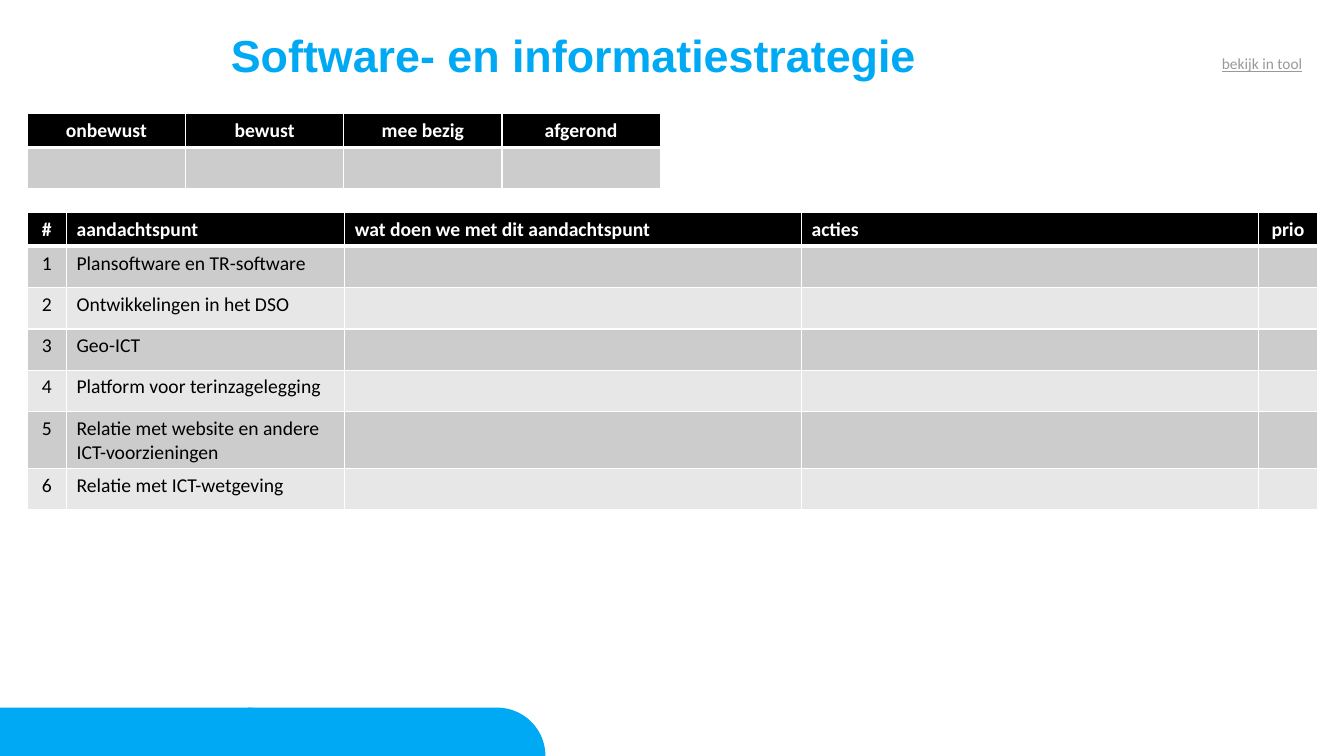
from math import cos, pi, sin

from lxml.etree import SubElement
from pptx import Presentation
from pptx.dml.color import RGBColor
from pptx.enum.text import MSO_ANCHOR, PP_ALIGN
from pptx.oxml.ns import qn
from pptx.util import Inches, Pt

BLUE = RGBColor(0x00, 0xA9, 0xF3)
BLACK = RGBColor(0x00, 0x00, 0x00)
WHITE = RGBColor(0xFF, 0xFF, 0xFF)
DARK_BAND = RGBColor(0xCC, 0xCC, 0xCC)
LIGHT_BAND = RGBColor(0xE7, 0xE7, 0xE7)
LINK_GREY = RGBColor(0x99, 0x99, 0x99)

HEADER_HEIGHT = 0.33
ROW_HEIGHT = 0.41

STATUSES = ["onbewust", "bewust", "mee bezig", "afgerond"]
HEADINGS = ["#", "aandachtspunt", "wat doen we met dit aandachtspunt", "acties", "prio"]
TOPICS = [
    "Plansoftware en TR-software",
    "Ontwikkelingen in het DSO",
    "Geo-ICT",
    "Platform voor terinzagelegging",
    "Relatie met website en andere ICT-voorzieningen",
    "Relatie met ICT-wetgeving",
]


class SlideBuilder:
    table_font = "Calibri"
    table_size = 14

    def __init__(self, deck):
        self.page = deck.slides.add_slide(deck.slide_layouts[6])

    def format_paragraph(self, para, font, size, color, bold=False, underline=False):
        for span in para.runs:
            span.font.name = font
            span.font.size = Pt(size)
            span.font.color.rgb = color
            span.font.bold = bold
            span.font.underline = underline

    def text(self, left, top, width, height, text, margins=True, spacing=1.0, **style):
        box = self.page.shapes.add_textbox(
            Inches(left), Inches(top), Inches(width), Inches(height))
        frame = box.text_frame
        frame.word_wrap = True
        frame.vertical_anchor = MSO_ANCHOR.TOP
        if not margins:
            frame.margin_left = frame.margin_right = 0
            frame.margin_top = frame.margin_bottom = 0
        frame.text = text
        para = frame.paragraphs[0]
        para.line_spacing = spacing
        self.format_paragraph(para, **style)

    def rounded_tab(self, left, right, top, bottom):
        radius = bottom - top
        angles = [pi / 2 * (1 - step / 24) for step in range(25)]
        arc = [(Inches(right - radius + radius * cos(angle)),
                Inches(bottom - radius * sin(angle))) for angle in angles]
        outline = self.page.shapes.build_freeform(Inches(left), Inches(bottom))
        outline.add_line_segments([(Inches(left), Inches(top))] + arc)
        tab = outline.convert_to_shape()
        tab.shadow.inherit = False
        tab.fill.solid()
        tab.fill.fore_color.rgb = BLUE
        tab.line.fill.background()

    def cell_borders(self, cell, top, bottom):
        properties = cell._tc.get_or_add_tcPr()
        widths = {"a:lnL": 1, "a:lnR": 1, "a:lnT": top, "a:lnB": bottom}
        for index, (tag, width) in enumerate(widths.items()):
            border = SubElement(properties, qn(tag), w=str(Pt(width)))
            fill = SubElement(border, qn("a:solidFill"))
            SubElement(fill, qn("a:srgbClr"), val=str(WHITE))
            properties.insert(index, border)

    def table(self, left, top, widths, rows, centered):
        heights = [HEADER_HEIGHT] + [ROW_HEIGHT] * (len(rows) - 1)
        grid = self.page.shapes.add_table(
            len(rows), len(widths), Inches(left), Inches(top),
            Inches(sum(widths)), Inches(sum(heights))).table
        grid.horz_banding = False
        for column, width in zip(grid.columns, widths):
            column.width = Inches(width)
        for row_index, (values, height) in enumerate(zip(rows, heights)):
            grid.rows[row_index].height = Inches(height)
            header = row_index == 0
            band = DARK_BAND if row_index % 2 else LIGHT_BAND
            for column_index, value in enumerate(values):
                cell = grid.cell(row_index, column_index)
                cell.fill.solid()
                cell.fill.fore_color.rgb = BLACK if header else band
                self.cell_borders(cell, top=3 if row_index == 1 else 1,
                                  bottom=3 if header else 1)
                cell.text_frame.text = value
                para = cell.text_frame.paragraphs[0]
                if column_index in centered:
                    para.alignment = PP_ALIGN.CENTER
                self.format_paragraph(para, self.table_font, self.table_size,
                                      WHITE if header else BLACK, bold=header)


def main():
    deck = Presentation()
    deck.slide_width = Inches(13.33)
    deck.slide_height = Inches(7.5)
    builder = SlideBuilder(deck)

    for left, right in [(0, 2.94), (2.46, 5.41)]:
        builder.rounded_tab(left, right, 7.02, 7.5)
    builder.text(2.29, 0.34, 6.84, 0.57, "Software- en informatiestrategie",
                 margins=False, spacing=0.9, font="Arial", size=32, color=BLUE, bold=True)

    topic_rows = [[str(number), topic, "", "", ""]
                  for number, topic in enumerate(TOPICS, start=1)]
    builder.table(0.27, 2.11, [0.39, 2.76, 4.53, 4.53, 0.59],
                  [HEADINGS] + topic_rows, centered={0, 4})
    builder.table(0.27, 1.13, [1.57] * 4, [STATUSES, [""] * 4], centered=range(4))

    builder.text(12.02, 0.49, 1.04, 0.29, "bekijk in tool",
                 font="Calibri", size=11, color=LINK_GREY, underline=True)
    deck.save("out.pptx")


if __name__ == "__main__":
    main()
